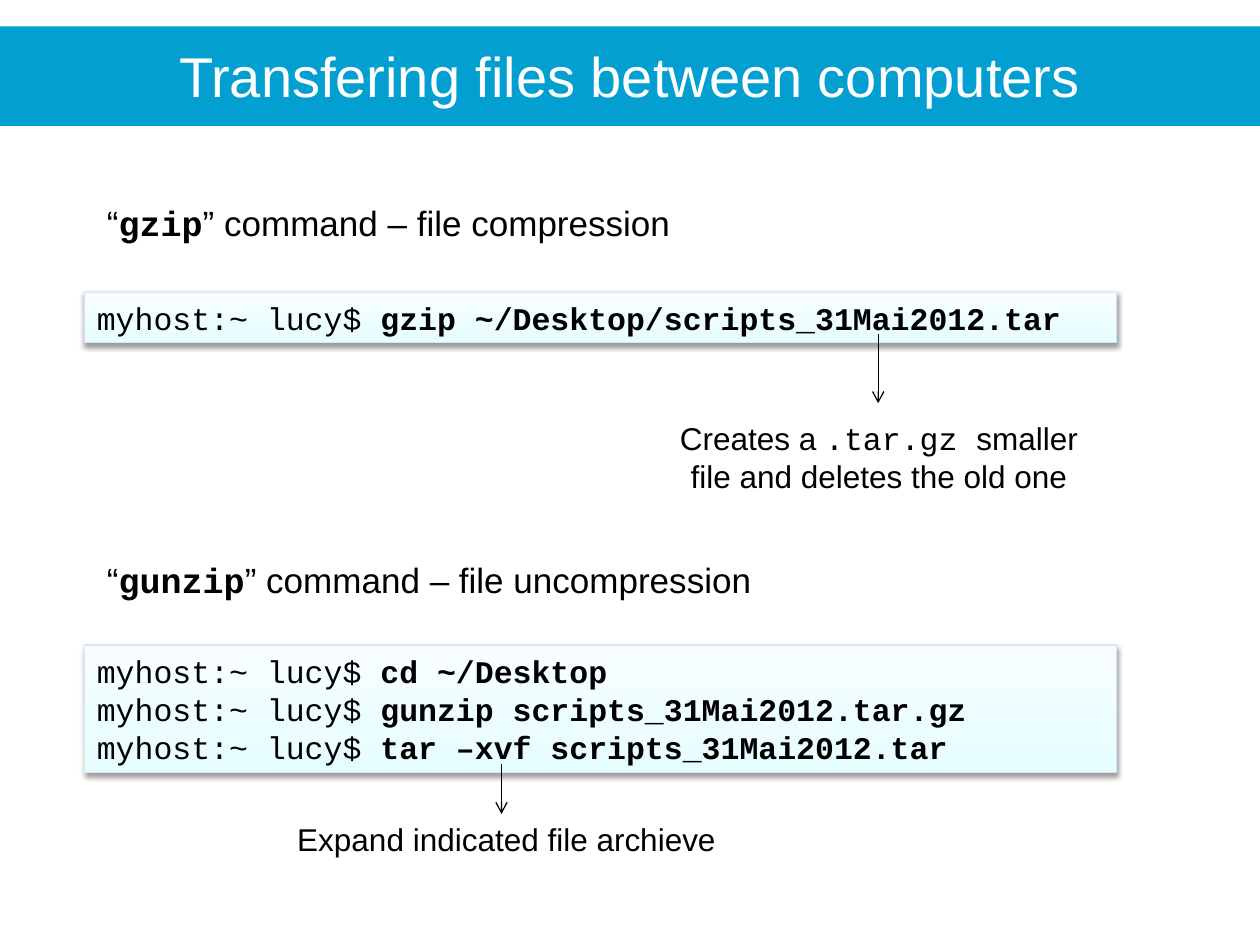
from lxml import etree
from pptx import Presentation
from pptx import util as u
from pptx.dml.color import RGBColor
from pptx.enum import shapes, text
from pptx.oxml import parse_xml
from pptx.oxml.ns import qn

NS = 'xmlns:a="http://schemas.openxmlformats.org/drawingml/2006/main"'
SANS, MONO = "Arial", "Courier New"
BLACK, WHITE, BLUE, EDGE = "000000", "FFFFFF", "039FD0", "D5E8EA"
STOPS = [(0, "E6FDFF"), (35, "ECFDFF"), (100, "F8FEFF")]
HOST = ("myhost:~ lucy$ ", MONO, False)

TITLE = "Transfering files between computers"
HEADS = [
    ((0.75, 1.55, 4.8, 0.44), "gzip", "” command – file compression"),
    ((0.75, 4.38, 6.61, 0.44), "gunzip", "” command – file uncompression"),
]
CODES = [
    (2.32, 0.4, ["gzip ~/Desktop/scripts_31Mai2012.tar"]),
    (5.12, 1.01, ["cd ~/Desktop",
                  "gunzip scripts_31Mai2012.tar.gz",
                  "tar –xvf scripts_31Mai2012.tar"]),
]
NOTES = [
    ((5.28, 3.28, 3.39, 0.71), [("Creates a ", SANS, False),
                                (".tar.gz ", MONO, False),
                                ("smaller file and deletes the old one", SANS, False)]),
    ((2.09, 6.46, 3.86, 0.4), [("Expand indicated file archieve", SANS, False)]),
]
ARROWS = [(6.97, 2.65, 3.2), (3.98, 6.06, 6.46)]


def rgb(code):
    return RGBColor.from_string(code)


def inch(box):
    return [u.Inches(n) for n in box]


def write(frame, lines, size, align=text.PP_ALIGN.LEFT, color=BLACK):
    frame.word_wrap = True
    for i, runs in enumerate(lines):
        para = frame.add_paragraph() if i else frame.paragraphs[0]
        para.alignment = align
        for words, face, bold in runs:
            run = para.add_run()
            run.text = words
            run.font.name, run.font.bold = face, bold
            run.font.size = u.Pt(size)
            run.font.color.rgb = rgb(color)


def add_rect(slide, box):
    rect = slide.shapes.add_shape(shapes.MSO_SHAPE.RECTANGLE, *inch(box))
    rect.shadow.inherit = False
    return rect


def add_label(slide, box, runs, size, align):
    label = slide.shapes.add_textbox(*inch(box))
    write(label.text_frame, [runs], size, align)


def add_code(slide, top, height, cmds):
    rect = add_rect(slide, (0.67, top, 8.19, height))
    rect.line.color.rgb = rgb(EDGE)
    rect.line.width = u.Pt(0.75)
    stops = "".join(f'<a:gs pos="{pos * 1000}"><a:srgbClr val="{code}"/></a:gs>'
                    for pos, code in STOPS)
    props = rect.element.spPr
    props.find(qn("a:prstGeom")).addnext(parse_xml(
        f'<a:gradFill {NS} rotWithShape="1"><a:gsLst>{stops}</a:gsLst>'
        '<a:lin ang="16200000" scaled="0"/></a:gradFill>'))
    props.find(qn("a:effectLst")).append(parse_xml(
        f'<a:outerShdw {NS} blurRad="{u.Pt(3.1)}" dist="{u.Pt(1.6)}" dir="5400000" '
        f'rotWithShape="0"><a:srgbClr val="{BLACK}"><a:alpha val="38000"/>'
        '</a:srgbClr></a:outerShdw>'))
    write(rect.text_frame, [[HOST, (cmd, MONO, True)] for cmd in cmds], 18)


def add_arrow(slide, x, top, end):
    line = slide.shapes.add_connector(shapes.MSO_CONNECTOR.STRAIGHT,
                                      *inch((x, top, x, end)))
    line.line.color.rgb = rgb(BLACK)
    line.line.width = u.Pt(0.75)
    etree.SubElement(line.line._get_or_add_ln(), qn("a:tailEnd"), type="arrow")
    etree.SubElement(line.element.spPr, qn("a:effectLst"))


def main():
    deck = Presentation()
    deck.slide_width, deck.slide_height = inch((10, 7.5))
    slide = deck.slides.add_slide(deck.slide_layouts[5])

    title = slide.shapes.title
    title.left, title.top, title.width, title.height = inch((1.14, 0.28, 7.72, 0.64))
    write(title.text_frame, [[(TITLE, SANS, False)]], 32, text.PP_ALIGN.CENTER, WHITE)
    band = add_rect(slide, (0, 0.21, 10, 0.79))
    band.fill.solid()
    band.fill.fore_color.rgb = rgb(BLUE)
    band.line.fill.background()
    title.element.addprevious(band.element)

    for code in CODES:
        add_code(slide, *code)
    for box, cmd, rest in HEADS:
        runs = [("“", SANS, False), (cmd, MONO, True), (rest, SANS, False)]
        add_label(slide, box, runs, 20, text.PP_ALIGN.LEFT)
    for arrow in ARROWS:
        add_arrow(slide, *arrow)
    for box, runs in NOTES:
        add_label(slide, box, runs, 18, text.PP_ALIGN.CENTER)
    deck.save("out.pptx")


if __name__ == "__main__":
    main()
